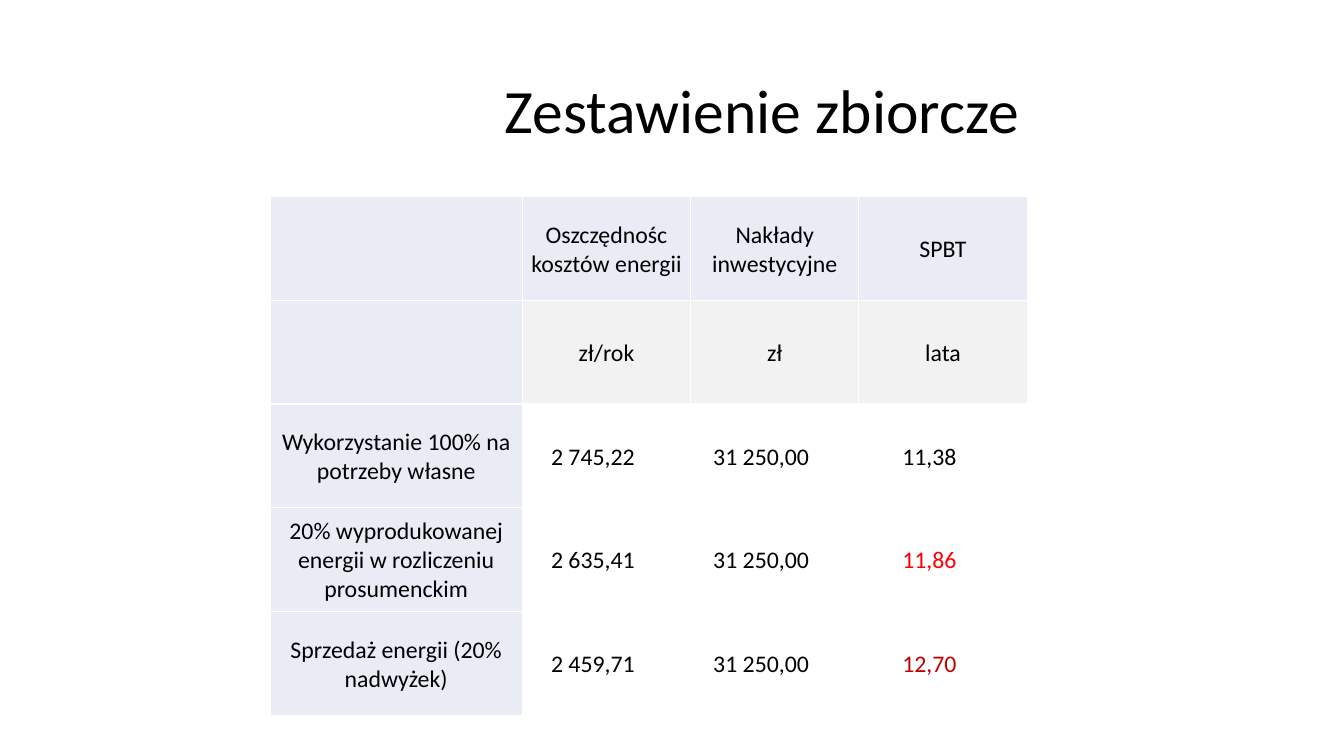
import pptx
import pptx.dml.color
import pptx.enum.text
import pptx.oxml
import pptx.oxml.ns
import pptx.util

Pt = pptx.util.Pt
MIDDLE = pptx.enum.text.MSO_ANCHOR.MIDDLE
CENTER = pptx.enum.text.PP_ALIGN.CENTER


def colour(hex_code):
    return pptx.dml.color.RGBColor.from_string(hex_code)


def add_span(para, text, size, hex_code="000000"):
    span = para.add_run()
    span.text = text
    span.font.name = "Calibri"
    span.font.size = Pt(size)
    span.font.color.rgb = colour(hex_code)


deck = pptx.Presentation()
deck.slide_width, deck.slide_height = Pt(960), Pt(540)
page = deck.slides.add_slide(deck.slide_layouts[6])

# Title
title_box = page.shapes.add_textbox(Pt(353.5), Pt(28.75), Pt(540.7), Pt(104.4))
title_frame = title_box.text_frame
title_frame.word_wrap = True
title_frame.vertical_anchor = MIDDLE
title_para = title_frame.paragraphs[0]
title_para.line_spacing = 0.9
add_span(title_para, "Zestawienie zbiorcze", 44)

# Summary table
rows = [
    ["", "Oszczędnośc kosztów energii", "Nakłady inwestycyjne", "SPBT"],
    ["", "zł/rok", "zł", "lata"],
    ["Wykorzystanie 100% na potrzeby własne", "2 745,22", "31 250,00", "11,38"],
    ["20% wyprodukowanej energii w rozliczeniu prosumenckim",
     "2 635,41", "31 250,00", "11,86"],
    ["Sprzedaż energii (20% nadwyżek)", "2 459,71", "31 250,00", "12,70"],
]
payback_colours = {(3, 3): "FF0000", (4, 3): "C00000"}
column_widths = [180.2, 120.2, 120.2, 120.2]
row_height = 74.1

table = page.shapes.add_table(
    len(rows), len(column_widths), Pt(192.9), Pt(140.4),
    Pt(sum(column_widths)), Pt(row_height * len(rows))).table
for column, width in zip(table.columns, column_widths):
    column.width = Pt(width)

for r, row in enumerate(rows):
    table.rows[r].height = Pt(row_height)
    for c, text in enumerate(row):
        cell = table.cell(r, c)
        is_value = r > 1 and c > 0
        cell.vertical_anchor = MIDDLE
        cell.margin_left = cell.margin_top = Pt(1.5)
        # Values sit left of the column centre
        cell.margin_right = Pt(20.8 if is_value else 1.5)
        cell.margin_bottom = Pt(0)
        para = cell.text_frame.paragraphs[0]
        para.alignment = CENTER
        if text:
            add_span(para, text, 17, payback_colours.get((r, c), "000000"))

        # White borders come before the fill in the cell properties
        for side in ("lnL", "lnR", "lnT", "lnB"):
            cell_properties = cell._tc.get_or_add_tcPr()
            cell_properties.append(pptx.oxml.parse_xml(
                f'<a:{side} {pptx.oxml.ns.nsdecls("a")} w="12700"><a:solidFill>'
                f'<a:srgbClr val="FFFFFF"/></a:solidFill></a:{side}>'))
        cell.fill.solid()
        if r == 0 or c == 0:
            cell.fill.fore_color.rgb = colour("E9EBF5")
        else:
            cell.fill.fore_color.rgb = colour("F2F2F2" if r == 1 else "FFFFFF")

deck.save("out.pptx")
